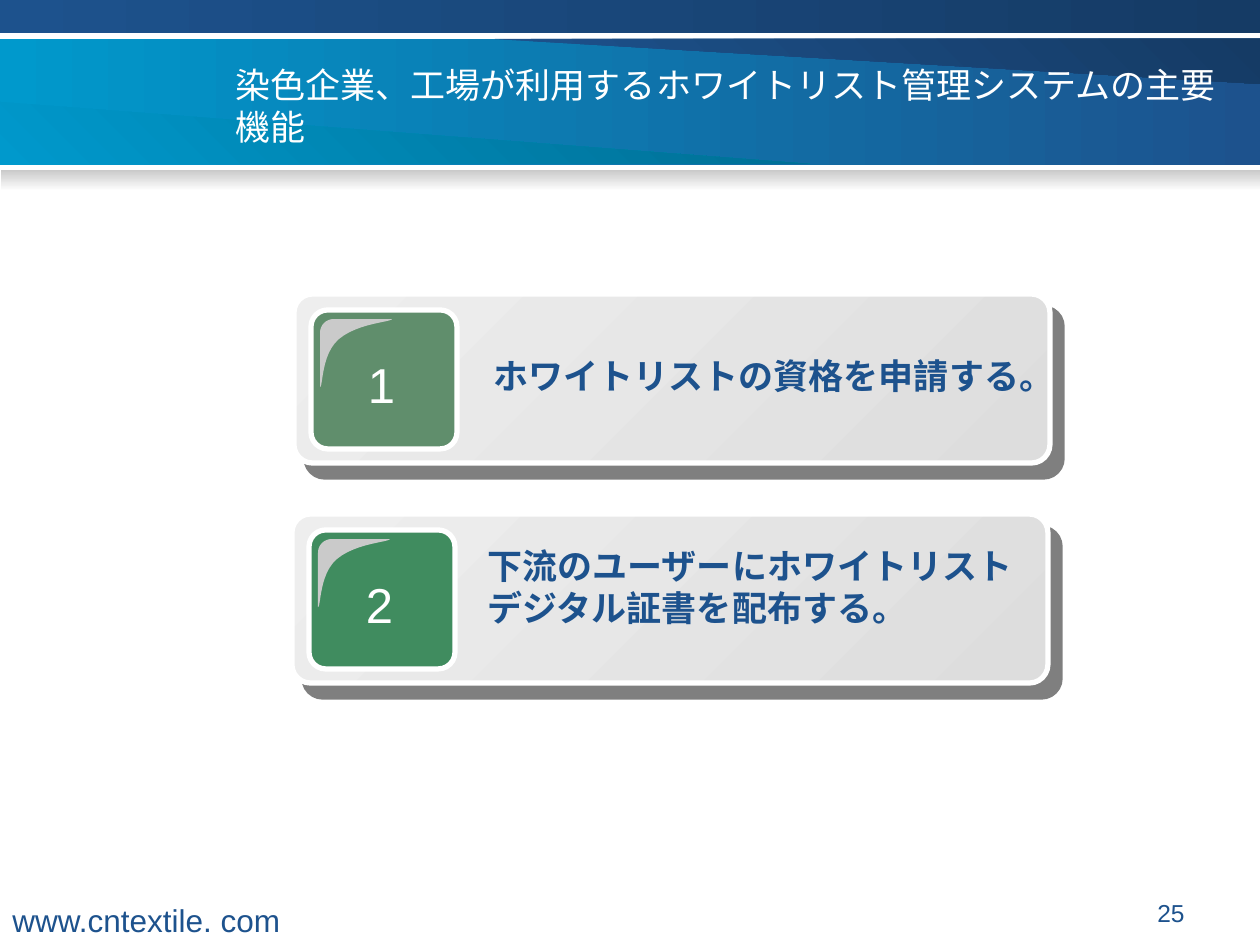
from lxml import etree
from pptx import Presentation
from pptx.dml.color import RGBColor
from pptx.enum.shapes import MSO_SHAPE
from pptx.enum.text import MSO_ANCHOR, MSO_AUTO_SIZE, PP_ALIGN
from pptx.oxml.ns import qn
from pptx.util import Pt

RECT = MSO_SHAPE.RECTANGLE
ROUND = MSO_SHAPE.ROUNDED_RECTANGLE
TOP, MIDDLE = MSO_ANCHOR.TOP, MSO_ANCHOR.MIDDLE
LEFT, CENTER, RIGHT = PP_ALIGN.LEFT, PP_ALIGN.CENTER, PP_ALIGN.RIGHT
NO_FIT = MSO_AUTO_SIZE.NONE

EMU_PER_PX = 914400 / 126
FONT = "Arial"
COLORS = {
    "white": "FFFFFF",
    "black": "000000",
    "cyan": "0099CC",
    "teal": "006D92",
    "blue": "1D528D",
    "navy": "153B65",
    "silver": "CACACA",
    "light": "EEEEEE",
    "gray": "DDDDDD",
    "sage": "608E6C",
    "green": "408C5F",
}


def px(value):
    return round(value * EMU_PER_PX)


def color(name):
    return RGBColor.from_string(COLORS[name])


def write(frame, text, size=20, ink="blue", bold=False, align=LEFT):
    para = frame.paragraphs[0]
    para.alignment = align
    span = para.add_run()
    span.text = text
    span.font.name = FONT
    span.font.size = Pt(size)
    span.font.bold = bold
    span.font.color.rgb = color(ink)


def bezier(start, control1, control2, end, steps=12):
    curve = []
    for step in range(1, steps + 1):
        t = step / steps
        weights = ((1 - t) ** 3, 3 * t * (1 - t) ** 2, 3 * t * t * (1 - t), t ** 3)
        corners = (start, control1, control2, end)
        curve.append(tuple(sum(w * p[axis] for w, p in zip(weights, corners))
                           for axis in (0, 1)))
    return curve


GLOSS = [
    (14, 0),
    *bezier((14, 0), (6, 0), (0, 6), (0, 14)),
    (0, 68),
    *bezier((0, 68), (3, 69), (1, 35), (19, 20)),
    *bezier((19, 20), (38, 4), (72, 3), (72, 0)),
]


class Painter:
    def __init__(self, page):
        self.page = page

    def paint(self, shape, fill, angle=0, outline=None):
        shape.shadow.inherit = False
        if isinstance(fill, tuple):
            shape.fill.gradient()
            shape.fill.gradient_angle = -angle % 360
            for stop, name in zip(shape.fill.gradient_stops, fill):
                stop.color.rgb = color(name)
        else:
            shape.fill.solid()
            shape.fill.fore_color.rgb = color(fill)
        if outline:
            shape.line.color.rgb = color(outline)
            shape.line.width = Pt(3)
        else:
            shape.line.fill.background()
        return shape

    def block(self, x, y, width, height, fill, kind=RECT, corner=None, **style):
        shape = self.page.shapes.add_shape(kind, px(x), px(y), px(width), px(height))
        if corner:
            shape.adjustments[0] = corner
        return self.paint(shape, fill, **style)

    def outline(self, points, fill, x=0, y=0, angle=0):
        corners = [(px(x + dx), px(y + dy)) for dx, dy in points]
        builder = self.page.shapes.build_freeform(*corners[0], scale=1.0)
        builder.add_line_segments(corners[1:], close=True)
        return self.paint(builder.convert_to_shape(), fill, angle)

    def drop_shadow(self, shape):
        effects = shape._element.spPr.find(qn("a:effectLst"))
        shadow = etree.SubElement(effects, qn("a:outerShdw"), dist=str(Pt(10.6)),
                                  dir=str(49 * 60000), algn="ctr", rotWithShape="0")
        tint = etree.SubElement(shadow, qn("a:srgbClr"), val=COLORS["black"])
        etree.SubElement(tint, qn("a:alpha"), val="50000")

    def text(self, x, y, width, height, text, wrap=True, anchor=TOP, **style):
        box = self.page.shapes.add_textbox(px(x), px(y), px(width), px(height))
        frame = box.text_frame
        frame.word_wrap = wrap
        frame.auto_size = NO_FIT
        frame.vertical_anchor = anchor
        write(frame, text, **style)

    def card(self, x, y, number, badge, label, label_x, label_y, label_height):
        panel = self.block(x, y, 756, 169, ("light", "gray"), kind=ROUND,
                           corner=0.11, angle=45, outline="white")
        self.drop_shadow(panel)
        self.block(x + 17, y + 16, 146, 139, badge, kind=ROUND,
                   corner=0.12, outline="white")
        self.outline(GLOSS, "silver", x + 26, y + 25)
        self.text(x + 61, y + 54, 53, 72, number, wrap=False,
                  size=28, ink="white", align=CENTER)
        self.text(label_x, label_y, 556, label_height, label, bold=True)


def main():
    deck = Presentation()
    deck.slide_width, deck.slide_height = px(1260), px(945)
    painter = Painter(deck.slides.add_slide(deck.slide_layouts[6]))

    painter.block(0, 39, 1261, 126, ("cyan", "blue"))
    painter.outline([(1237, 39), (495, 39), (1261, 84), (1261, 39)],
                    ("blue", "navy"), angle=315)
    painter.outline([(24, 164), (810, 164), (0, 102), (0, 164)],
                    ("cyan", "teal"), angle=315)
    painter.block(0, 0, 1260, 33, ("blue", "navy"))
    painter.block(1, 170, 1259, 21, ("silver", "white"), angle=90)
    painter.text(223, 45, 1037, 120,
                 "染色企業、工場が利用するホワイトリスト管理システムの主要機能",
                 anchor=MIDDLE, ink="white")

    painter.card(294, 294, "1", "sage", "ホワイトリストの資格を申請する。",
                 481, 348, 55)
    painter.card(292, 514, "2", "green",
                 "下流のユーザーにホワイトリストデジタル証書を配布する。",
                 475, 538, 97)

    painter.text(0, 895, 295, 50, "www.cntextile. com", wrap=False, size=18)
    painter.text(903, 892, 294, 34, "25", size=14, align=RIGHT)
    deck.save("out.pptx")


if __name__ == "__main__":
    main()
